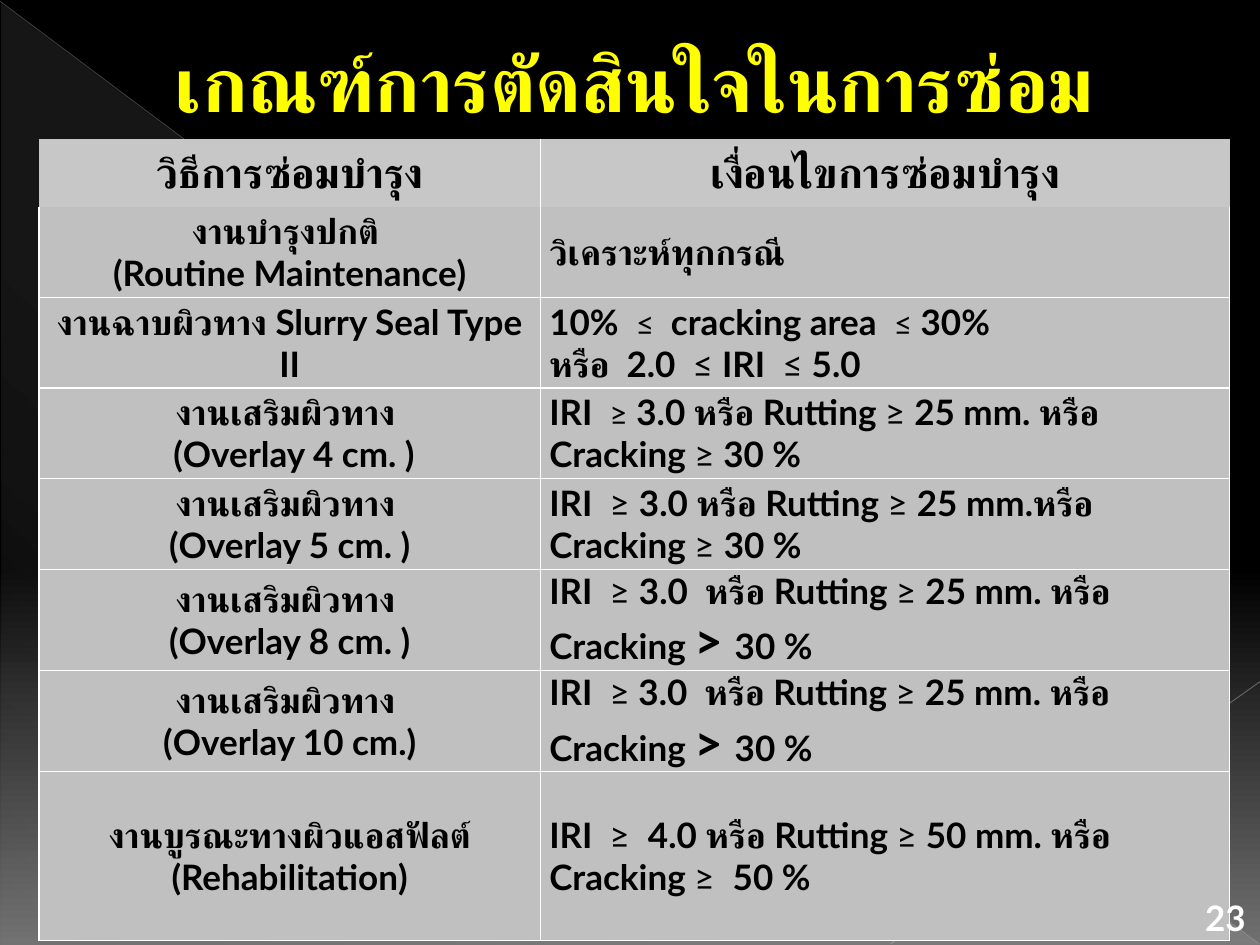
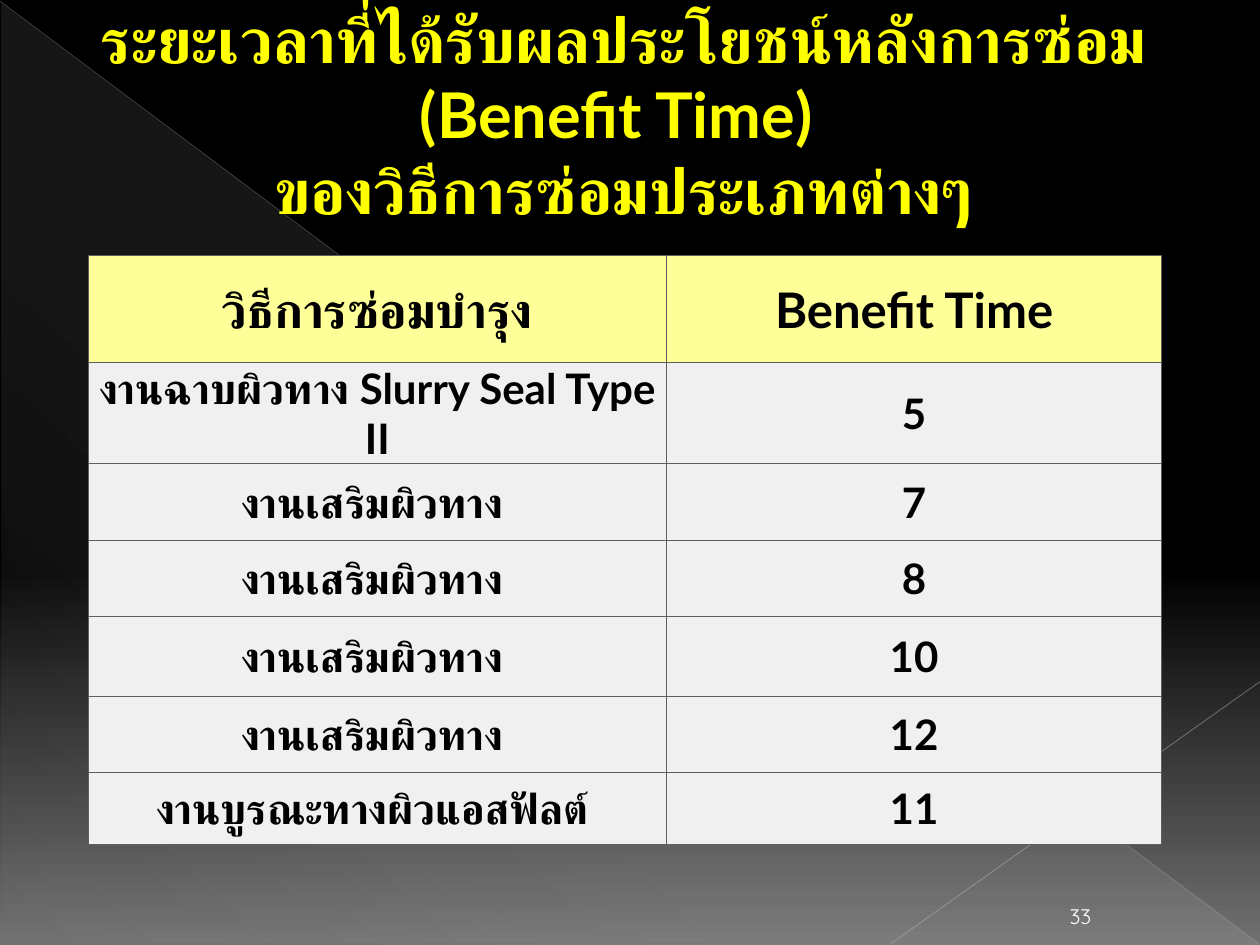
from dataclasses import dataclass
from lxml import etree
from pptx import Presentation
from pptx.dml.color import RGBColor
from pptx.enum.shapes import MSO_CONNECTOR, MSO_SHAPE
from pptx.enum.text import MSO_ANCHOR, PP_ALIGN
from pptx.oxml import parse_xml
from pptx.util import Inches, Pt

NS = "http://schemas.openxmlformats.org/drawingml/2006/main"
STRAIGHT, RIGHT_TRIANGLE = MSO_CONNECTOR.STRAIGHT, MSO_SHAPE.RIGHT_TRIANGLE
TOP, MIDDLE, BOTTOM = MSO_ANCHOR.TOP, MSO_ANCHOR.MIDDLE, MSO_ANCHOR.BOTTOM
LEFT, CENTER = PP_ALIGN.LEFT, PP_ALIGN.CENTER


@dataclass(frozen=True)
class Theme:
    """Colours, fonts and type sizes of the deck."""
    font: str = "Lato"
    number_font: str = "Quicksand"
    title: str = "FFFF00"
    ink: str = "000000"
    white: str = "FFFFFF"
    grey_head: str = "C7C7C7"
    grey_body: str = "C0C0C0"
    yellow_head: str = "FFFF99"
    pale_body: str = "F0F0F0"
    rule: str = "5F5F5F"
    backdrop: tuple = ((0, "000000", 100), (60, "000000", 100), (100, "707070", 100))
    sheen: tuple = ((0, "F8F8F8", 10), (70, "F8F8F8", 8), (100, "F8F8F8", 1))
    small: int = 18
    body: int = 20
    big: int = 28


def gradient(stops, angle):
    """Return a linear gradient fill element."""
    gs = "".join(
        f'<a:gs pos="{pos * 1000}"><a:srgbClr val="{color}">'
        f'<a:alpha val="{alpha * 1000}"/></a:srgbClr></a:gs>'
        for pos, color, alpha in stops)
    return parse_xml(f'<a:gradFill xmlns:a="{NS}" rotWithShape="1"><a:gsLst>{gs}</a:gsLst>'
                     f'<a:lin ang="{angle * 60000}" scaled="0"/></a:gradFill>')


def line_xml(tag, color, width):
    """Return a line element, empty when there is no colour."""
    fill = (f'<a:solidFill><a:srgbClr val="{color}"/></a:solidFill>'
            if color else "<a:noFill/>")
    return parse_xml(f'<a:{tag} xmlns:a="{NS}" w="{Pt(width)}">{fill}</a:{tag}>')


class Deck:
    """Holds the theme and the current slide, and draws each kind of element."""

    def __init__(self, theme):
        self.theme = theme
        self.prs = Presentation()
        self.prs.slide_width, self.prs.slide_height = Inches(10), Inches(7.5)
        self.s = None

    def new_slide(self):
        """Start a blank slide with the shared backdrop."""
        self.s = self.prs.slides.add_slide(self.prs.slide_layouts[6])
        fill = self.s.background.fill
        fill.solid()
        bg = self.s.element.find(f".//{{{NS}}}solidFill")
        bg.getparent().replace(bg, gradient(self.theme.backdrop, 90))
        self.triangle(0.01, 0.02, 9.99, 7.48)
        self.line((0, 0.01), (9.99, 7.49), "B4B4B4", 0.39, 35)
        self.line((10, 5.41), (7.07, 7.49), "BDBDBD", 0.47, 45)

    def triangle(self, *box):
        """Draw the pale corner triangle."""
        sp = self.s.shapes.add_shape(RIGHT_TRIANGLE, *map(Inches, box))
        sp.shadow.inherit = False
        sp.line.fill.background()
        sp.fill.solid()
        solid = sp.element.spPr.find(f"{{{NS}}}solidFill")
        sp.element.spPr.replace(solid, gradient(self.theme.sheen, 133))

    def line(self, start, end, color, width, alpha):
        """Draw a thin translucent line."""
        cn = self.s.shapes.add_connector(STRAIGHT, *map(Inches, start + end))
        cn.line.color.rgb = RGBColor.from_string(color)
        cn.line.width = Pt(width)
        clr = cn.element.spPr.find(f".//{{{NS}}}srgbClr")
        etree.SubElement(clr, f"{{{NS}}}alpha", val=str(alpha * 1000))
        etree.SubElement(cn.element.spPr, f"{{{NS}}}effectLst")

    def run(self, p, text, size, color, bold=True, font=None, outline=None):
        """Add text to a paragraph, with a line break at each newline."""
        for i, part in enumerate(text.split("\n")):
            if i:
                p.add_line_break()
            r = p.add_run()
            r.text = part
            r.font.size, r.font.bold = Pt(size), bold
            r.font.name = font or self.theme.font
            r.font.color.rgb = RGBColor.from_string(color)
            rPr = r.font._element
            etree.SubElement(rPr, f"{{{NS}}}cs", typeface=r.font.name)
            if outline:
                rPr.insert(0, line_xml("ln", *outline))

    def text(self, box, lines, size, color, anchor=TOP, indent=(0, 0), before=0, **style):
        """Add a centred text box with one paragraph a line."""
        tf = self.s.shapes.add_textbox(*map(Inches, box)).text_frame
        tf.word_wrap, tf.vertical_anchor = True, anchor
        for i, line in enumerate(lines):
            p = tf.add_paragraph() if i else tf.paragraphs[0]
            p.alignment, p.space_before = CENTER, Pt(before)
            pPr = p._p.get_or_add_pPr()
            pPr.set("marL", str(Inches(indent[0])))
            pPr.set("indent", str(Inches(indent[1])))
            self.run(p, line, size, color, **style)

    def title(self, box, lines, size, **style):
        """Add the yellow slide title."""
        self.text(box, lines, size, self.theme.title, **style)

    def page_number(self, left, top, number, size, **style):
        """Add the page number."""
        self.text((left, top, 0.55, 0.33), [number], size, self.theme.white,
                  anchor=BOTTOM, **style)

    def condition(self, p, text, size):
        """Add runs split at bars: signs are light, '-' marks a small one, '>' is big."""
        for part in text.split("|"):
            light = part.strip(" -") in ("≤", "≥")
            run_size = size
            if part.startswith("-"):
                run_size = self.theme.small
            elif part.strip() == ">":
                run_size = self.theme.big
            self.run(p, part.lstrip("-"), run_size, self.theme.ink, bold=not light)

    def cell(self, cell, paragraphs, size, fill, align, borders, header):
        """Fill, border and write one table cell."""
        cell.fill.solid()
        cell.fill.fore_color.rgb = RGBColor.from_string(fill)
        cell.vertical_anchor = MIDDLE
        cell.margin_left = cell.margin_right = Inches(0.07)
        cell.margin_top = cell.margin_bottom = 0
        tcPr = cell._tc.get_or_add_tcPr()
        for i, (side, (color, width)) in enumerate(borders.items()):
            tcPr.insert(i, line_xml("ln" + side, color, width))
        for i, text in enumerate(paragraphs):
            p = cell.text_frame.add_paragraph() if i else cell.text_frame.paragraphs[0]
            p.alignment = align
            if header:
                p.space_before, p.space_after = Pt(3), Pt(6)
            self.condition(p, text, size)

    def table(self, left, top, cols, heights, rows, sizes, fills, border, aligns,
              open_head=False):
        """Add a table whose first row is the header; an open head keeps only its divider."""
        gf = self.s.shapes.add_table(len(rows), len(cols), Inches(left), Inches(top),
                                     Inches(sum(cols)), Inches(sum(heights)))
        tbl = gf.table
        tbl.first_row = tbl.horz_banding = False
        for c, width in enumerate(cols):
            tbl.columns[c].width = Inches(width)
        for i, (height, row) in enumerate(zip(heights, rows)):
            tbl.rows[i].height = Inches(height)
            body = int(i > 0)
            for c, content in enumerate(row):
                hidden = ""
                if open_head and i == 0:
                    hidden = "LTB" if c == 0 else "RTB"
                elif open_head and i == 1:
                    hidden = "T"
                borders = {side: (None if side in hidden else border[0], border[1])
                           for side in "LRTB"}
                self.cell(tbl.cell(i, c), content.split("\r"), sizes[body], fills[body],
                          aligns[c] if body else CENTER, borders, not body)


def repair_criteria(deck):
    """Build the slide with the repair decision criteria."""
    t = deck.theme
    deck.new_slide()
    rows = [
        ("วิธีการซ่อมบำรุง", "เงื่อนไขการซ่อมบำรุง"),
        ("งานบำรุงปกติ \n(Routine Maintenance)", "วิเคราะห์ทุกกรณี"),
        ("งานฉาบผิวทาง Slurry Seal Type II",
         "10%  |-≤|  cracking area  |-≤| 30%\rหรือ  2.0  |≤ |IRI  |≤ |5.0"),
        ("งานเสริมผิวทาง \n (Overlay 4 cm. )",
         "IRI  |-≥| 3.0 หรือ Rutting |≥ |25 mm. หรือ Cracking |≥| 30 %"),
        ("งานเสริมผิวทาง \n(Overlay 5 cm. )",
         "IRI  |≥ |3.0 หรือ Rutting |≥ |25 mm.หรือ Cracking |≥ |30 %"),
        ("งานเสริมผิวทาง \n(Overlay 8 cm. )",
         "IRI  |≥ |3.0  หรือ Rutting |≥ |25 mm. หรือ Cracking |> |30 %"),
        ("งานเสริมผิวทาง \n(Overlay 10 cm.)",
         "IRI  |≥| 3.0  หรือ Rutting |≥ |25 mm. หรือ Cracking |> |30 %"),
        ("งานบูรณะทางผิวแอสฟัลต์ (Rehabilitation)",
         "IRI  |≥  |4.0 หรือ Rutting |≥ |50 mm. หรือ Cracking |≥  |50 %"),
    ]
    deck.table(0.31, 1.1, (3.98, 5.47), [0.54] + [0.72] * 4 + [0.8] * 2 + [1.34], rows,
               (24, t.body), (t.grey_head, t.grey_body), (t.white, 1), (CENTER, LEFT),
               open_head=True)
    deck.title((0.47, 0.23, 9.06, 0.81), ["เกณฑ์การตัดสินใจในการซ่อม"], 44,
               indent=(0.49, -0.42), before=9, outline=("FF0000", 1))
    deck.page_number(9.45, 7.17, "23", t.body)


def benefit_time(deck):
    """Build the slide with the benefit time of each repair method."""
    t = deck.theme
    deck.new_slide()
    deck.page_number(8.3, 7.09, "33", 12, bold=False, font=t.number_font)
    overlays = [("งานเสริมผิวทาง ", years) for years in ("7", "8", "10", "12")]
    rows = [("วิธีการซ่อมบำรุง", "Benefit Time"),
            ("งานฉาบผิวทาง Slurry Seal Type II", "5"),
            *overlays,
            ("งานบูรณะทางผิวแอสฟัลต์ ", "11")]
    deck.table(0.7, 2.03, (4.59, 3.93), (0.85, 0.8, 0.61, 0.6, 0.64, 0.6, 0.57), rows,
               (t.big, 24), (t.yellow_head, t.pale_body), (t.rule, 0.75), (CENTER, CENTER))
    deck.title((-0.16, 0.39, 9.69, 1.02),
               ["ระยะเวลาที่ได้รับผลประโยชน์หลังการซ่อม (Benefit Time) ",
                "ของวิธีการซ่อมประเภทต่างๆ"], 36,
               anchor=MIDDLE, indent=(0.53, 0), outline=("999999", 0.5))


def main():
    """Build and save the deck."""
    deck = Deck(Theme())
    repair_criteria(deck)
    benefit_time(deck)
    deck.prs.save("out.pptx")


if __name__ == "__main__":
    main()
